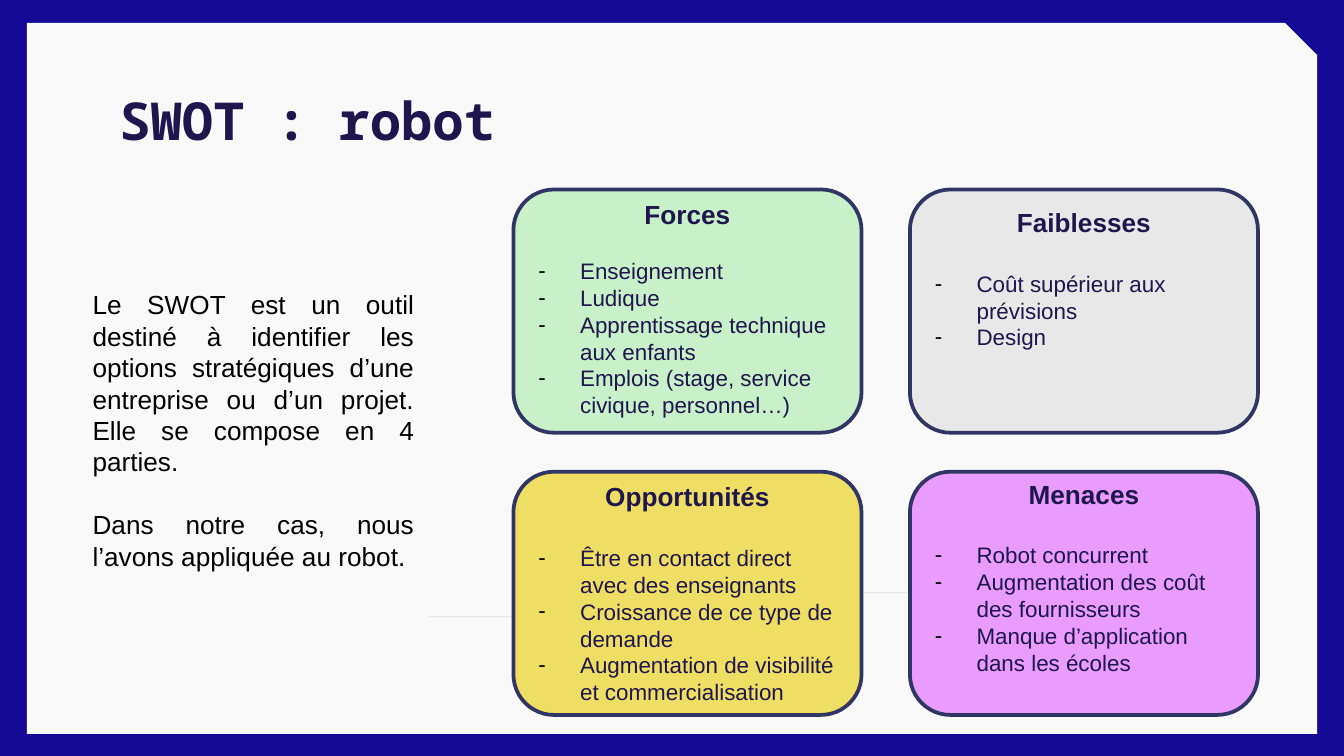
from lxml.etree import SubElement
from pptx import Presentation
from pptx.dml.color import RGBColor
from pptx.enum.shapes import MSO_SHAPE as SHAPE
from pptx.enum.text import MSO_ANCHOR as ANCHOR, PP_ALIGN as ALIGN
from pptx.oxml.ns import qn
from pptx.util import Inches, Pt

NAVY = "1F164D"


def rgb(value):
    return RGBColor.from_string(value)


def add_run(p, text, size, color, bold=False, font="Arial"):
    r = p.add_run()
    r.text = text
    r.font.name = font
    r.font.size = Pt(size)
    r.font.bold = bold
    r.font.color.rgb = rgb(color)


# 16:9 slide
prs = Presentation()
prs.slide_width, prs.slide_height = Inches(10), Inches(10 * 9 / 16)
s = prs.slides.add_slide(prs.slide_layouts[6])

# Blue background with the snipped pale panel
s.background.fill.solid()
s.background.fill.fore_color.rgb = rgb("130994")
panel = s.shapes.add_shape(SHAPE.SNIP_1_RECTANGLE, Inches(0.2), Inches(0.17),
                           Inches(9.6), Inches(5.29))
panel.adjustments[0] = 0.045
panel.shadow.inherit = False
panel.fill.solid()
panel.fill.fore_color.rgb = rgb("F9F9F9")
panel.line.fill.background()

# Thin circuit line behind the boxes
points = [(3.19, 4.59), (5.24, 4.59), (5.4, 4.41), (8.07, 4.41), (8.32, 4.67)]
points = [(Inches(x), Inches(y)) for x, y in points]
builder = s.shapes.build_freeform(*points[0])
builder.add_line_segments(points[1:], close=False)
circuit = builder.convert_to_shape()
circuit.shadow.inherit = False
circuit.fill.background()
circuit.line.color.rgb = rgb("E8E8E8")
circuit.line.width = Pt(0.75)
SubElement(circuit.line._get_or_add_ln(), qn("a:tailEnd"), type="oval")

# Title
tf = s.shapes.add_textbox(Inches(0.79), Inches(0.49), Inches(8.43), Inches(0.63)).text_frame
tf.word_wrap = True
tf.margin_top = tf.margin_bottom = Inches(0.1)
p = tf.paragraphs[0]
p.line_spacing = 1.15
add_run(p, "SWOT : robot", 28, NAVY, True, "Noto Sans Mono")

# SWOT grid: column, row, fill, top inset, gap under heading, heading, items
boxes = [
    (1, 1, "E99CFE", -0.04, 17, "Menaces",
     ["Robot concurrent", "Augmentation des coût des fournisseurs",
      "Manque d’application dans les écoles"]),
    (1, 0, "E8E8E8", 0.04, 17, "Faiblesses",
     ["Coût supérieur aux prévisions", "Design"]),
    (0, 0, "C9F1C9", -0.02, 14.5, "Forces",
     ["Enseignement", "Ludique", "Apprentissage technique aux enfants",
      "Emplois (stage, service civique, personnel…)"]),
    (0, 1, "EEDE64", -0.02, 17, "Opportunités",
     ["Être en contact direct avec des enseignants",
      "Croissance de ce type de demande",
      "Augmentation de visibilité et commercialisation"]),
]
for col, row, fill, inset, gap, heading, items in boxes:
    sp = s.shapes.add_shape(SHAPE.ROUNDED_RECTANGLE, Inches(3.82 + 2.95 * col),
                            Inches(1.41 + 2.1 * row), Inches(2.59), Inches(1.81))
    sp.shadow.inherit = False
    sp.fill.solid()
    sp.fill.fore_color.rgb = rgb(fill)
    sp.line.color.rgb = rgb("313563")
    sp.line.width = Pt(2)
    tf = sp.text_frame
    tf.word_wrap = True
    tf.vertical_anchor = ANCHOR.TOP
    tf.margin_top, tf.margin_bottom = Inches(inset), 0
    p = tf.paragraphs[0]
    p.alignment = ALIGN.CENTER
    add_run(p, heading, 14, NAVY, True)
    for i, item in enumerate(items):
        p = tf.add_paragraph()
        p.alignment = ALIGN.LEFT
        p.space_before = Pt(0 if i else gap)
        pPr = p._p.get_or_add_pPr()
        pPr.set("marL", str(Inches(0.31)))
        pPr.set("indent", str(Inches(-0.31)))
        SubElement(SubElement(pPr, qn("a:buClr")), qn("a:srgbClr"), val="000000")
        SubElement(pPr, qn("a:buSzPts"), val="1200")
        SubElement(pPr, qn("a:buFont"), typeface="Arial")
        SubElement(pPr, qn("a:buChar"), char="-")
        add_run(p, item, 12, NAVY)

# Explanation on the left
tf = s.shapes.add_textbox(Inches(0.59), Inches(2.1), Inches(2.59), Inches(2.22)).text_frame
tf.word_wrap = True
paragraphs = [
    "Le SWOT est un outil destiné à identifier les options stratégiques "
    "d’une entreprise ou d’un projet. Elle se compose en 4 parties.",
    "Dans notre cas, nous l’avons appliquée au robot.",
]
for i, text in enumerate(paragraphs):
    p = tf.add_paragraph() if i else tf.paragraphs[0]
    p.alignment = ALIGN.JUSTIFY
    if i:
        p.space_before = Pt(17)
    add_run(p, text, 14, "000000")

prs.save("out.pptx")
